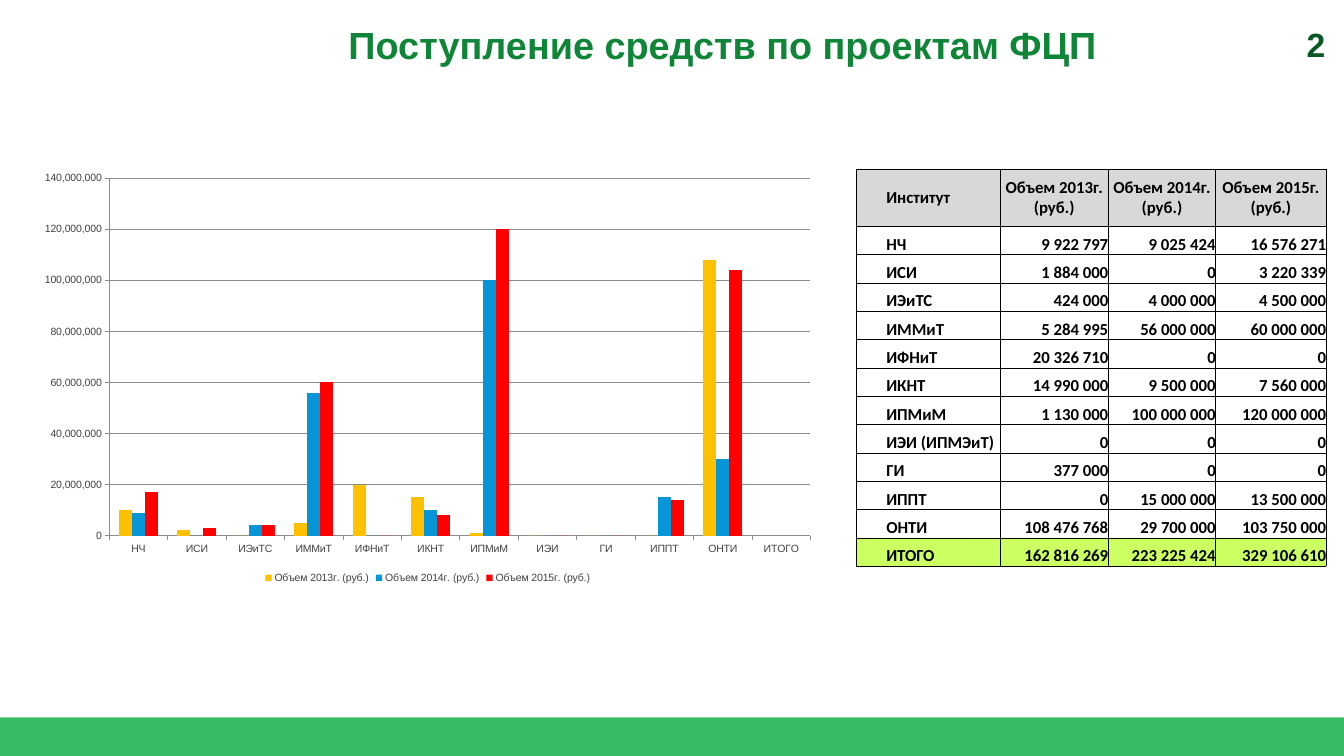
from dataclasses import dataclass
from typing import NamedTuple

from lxml.etree import SubElement
from pptx import Presentation
from pptx.chart.data import CategoryChartData as ChartData
from pptx.dml.color import RGBColor as Rgb
from pptx.enum.chart import XL_CHART_TYPE as Kind, XL_LEGEND_POSITION as Side, XL_TICK_MARK as Tick
from pptx.enum.shapes import MSO_SHAPE as Form
from pptx.enum.text import MSO_ANCHOR as Anchor, MSO_AUTO_SIZE as Fit, PP_ALIGN as Align
from pptx.oxml.ns import qn
from pptx.util import Cm, Pt


@dataclass(frozen=True)
class Theme:
    sans: str = "Arial"
    grid: str = "Calibri"
    title: str = "0E8537"
    page: str = "095825"
    band: str = "13B14A"
    ink: str = "000000"
    label: str = "424242"
    rule: str = "8C8C8C"
    paper: str = "FFFFFF"
    head: str = "D8D8D8"
    total: str = "CBFF62"
    bars: tuple = ("FFC000", "0696D7", "FF0000")
    title_pt: int = 36
    page_pt: int = 32
    cell_pt: int = 16
    chart_pt: int = 10


class Box(NamedTuple):
    left: float
    top: float
    width: float
    height: float

    def emu(self) -> list:
        return [Cm(side) for side in self]


class Row(NamedTuple):
    name: str
    sums: tuple


LOOK = Theme()
YEARS = [f"Объем {year}г. (руб.)" for year in (2013, 2014, 2015)]
ROWS = [
    Row("НЧ", (9922797, 9025424, 16576271)),
    Row("ИСИ", (1884000, 0, 3220339)),
    Row("ИЭиТС", (424000, 4000000, 4500000)),
    Row("ИММиТ", (5284995, 56000000, 60000000)),
    Row("ИФНиТ", (20326710, 0, 0)),
    Row("ИКНТ", (14990000, 9500000, 7560000)),
    Row("ИПМиМ", (1130000, 100000000, 120000000)),
    Row("ИЭИ (ИПМЭиТ)", (0, 0, 0)),
    Row("ГИ", (377000, 0, 0)),
    Row("ИППТ", (0, 15000000, 13500000)),
    Row("ОНТИ", (108476768, 29700000, 103750000)),
]
TOTAL = Row("ИТОГО", (162816269, 223225424, 329106610))


def style(font, face: str, size: int, color: str, bold: bool = True) -> None:
    font.name, font.size, font.bold = face, Pt(size), bold
    font.color.rgb = Rgb.from_string(color)


def paint(fill, color: str) -> None:
    fill.solid()
    fill.fore_color.rgb = Rgb.from_string(color)


def add_band(slide, box: Box) -> None:
    band = slide.shapes.add_shape(Form.RECTANGLE, *box.emu())
    band.shadow.inherit = False
    band.line.fill.background()
    paint(band.fill, LOOK.band)
    tone = band.fill._xPr.find(qn("a:solidFill"))[0]
    SubElement(tone, qn("a:alpha"), val="85000")


def set_title(slide, box: Box, text: str) -> None:
    title = slide.shapes.title
    title.left, title.top, title.width, title.height = box.emu()
    frame = title.text_frame
    frame.text = text
    frame.auto_size = Fit.NONE
    frame.vertical_anchor = Anchor.MIDDLE
    frame.margin_top = frame.margin_bottom = 0
    line = frame.paragraphs[0]
    line.alignment = Align.CENTER
    style(line.font, LOOK.sans, LOOK.title_pt, LOOK.title)


def add_page(slide, box: Box, text: str) -> None:
    frame = slide.shapes.add_textbox(*box.emu()).text_frame
    frame.word_wrap = True
    frame.text = text
    line = frame.paragraphs[0]
    line.alignment = Align.RIGHT
    style(line.font, LOOK.sans, LOOK.page_pt, LOOK.page)


def add_chart(slide, box: Box) -> None:
    """Plot the sums of each institute, rounded to millions."""
    data = ChartData(number_format="#,##0")
    data.categories = [row.name.split()[0] for row in (*ROWS, TOTAL)]
    for i, year in enumerate(YEARS):
        data.add_series(year, [round(row.sums[i], -6) for row in ROWS] + [None])
    chart = slide.shapes.add_chart(Kind.COLUMN_CLUSTERED, *box.emu(), data).chart
    style(chart.font, LOOK.sans, LOOK.chart_pt, LOOK.label, False)
    chart.has_title = False
    chart.has_legend = True
    chart.legend.position = Side.BOTTOM
    chart.legend.include_in_layout = False
    plot = chart.plots[0]
    plot.gap_width, plot.overlap, plot.vary_by_categories = 150, 0, False
    for series, color in zip(plot.series, LOOK.bars):
        paint(series.format.fill, color)
        series.invert_if_negative = False
    ruler = chart.value_axis
    ruler.has_major_gridlines = True
    ruler.maximum_scale, ruler.major_unit = 140000000, 20000000
    ruler.tick_labels.number_format = "#,##0"
    ruler.tick_labels.number_format_is_linked = False
    for axis in (chart.category_axis, ruler):
        axis.major_tick_mark = Tick.OUTSIDE
    for part in (chart.category_axis, ruler, ruler.major_gridlines):
        part.format.line.width = Pt(0.75)
        part.format.line.color.rgb = Rgb.from_string(LOOK.rule)


def add_edges(cell) -> None:
    props = cell._tc.get_or_add_tcPr()
    for side in "LRTB":
        edge = SubElement(props, qn(f"a:ln{side}"), w=str(Pt(0.5)))
        fill = SubElement(edge, qn("a:solidFill"))
        SubElement(fill, qn("a:srgbClr"), val=LOOK.ink)


def fill_cell(cell, text: str, align: Align, anchor: Anchor, color: str) -> None:
    cell.margin_left = cell.margin_right = cell.margin_top = cell.margin_bottom = 0
    cell.vertical_anchor = anchor
    add_edges(cell)
    paint(cell.fill, color)
    cell.text = text
    line = cell.text_frame.paragraphs[0]
    line.alignment = align
    if align == Align.LEFT:
        line._p.get_or_add_pPr().set("marL", str(Cm(1)))
    style(line.font, LOOK.grid, LOOK.cell_pt, LOOK.ink)


def add_table(slide, box: Box, widths: tuple, head: float) -> None:
    body = [*ROWS, TOTAL]
    grid = slide.shapes.add_table(len(body) + 1, len(widths), *box.emu()).table
    grid.first_row = grid.horz_banding = False
    for col, width in zip(grid.columns, widths):
        col.width = Cm(width)
    for row in grid.rows:
        row.height = Cm((box.height - head) / len(body))
    grid.rows[0].height = Cm(head)
    for c, text in enumerate(["Институт", *YEARS]):
        align = Align.CENTER if c else Align.LEFT
        fill_cell(grid.cell(0, c), text, align, Anchor.MIDDLE, LOOK.head)
    for r, row in enumerate(body, 1):
        color = LOOK.total if row is TOTAL else LOOK.paper
        sums = [f"{value:,}".replace(",", " ") for value in row.sums]
        for c, text in enumerate([row.name, *sums]):
            align = Align.RIGHT if c else Align.LEFT
            fill_cell(grid.cell(r, c), text, align, Anchor.BOTTOM, color)


def main() -> None:
    deck = Presentation()
    deck.slide_width, deck.slide_height = Cm(45.16), Cm(25.4)
    slide = deck.slides.add_slide(deck.slide_layouts[5])
    add_band(slide, Box(0, 24.1, 45.16, 1.3))
    set_title(slide, Box(4.6, 0.73, 39.37, 1.5), "Поступление средств по проектам ФЦП")
    add_page(slide, Box(42.98, 0.69, 1.8, 1.63), "2")
    add_chart(slide, Box(0.97, 5.51, 26.8, 14.2))
    add_table(slide, Box(28.78, 5.69, 15.78, 13.34), (4.83, 3.63, 3.61, 3.71), 1.91)
    deck.save("out.pptx")


if __name__ == "__main__":
    main()
